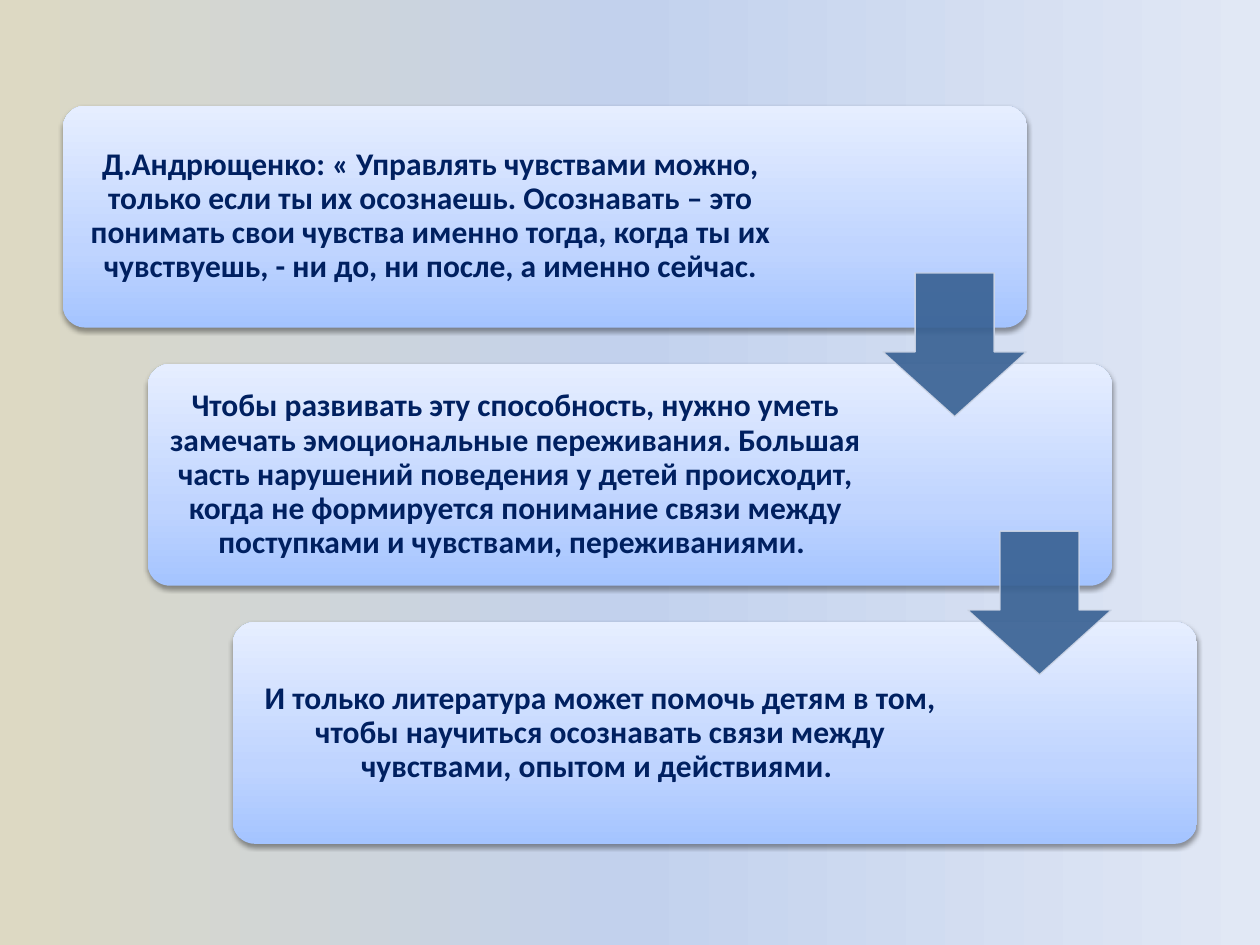
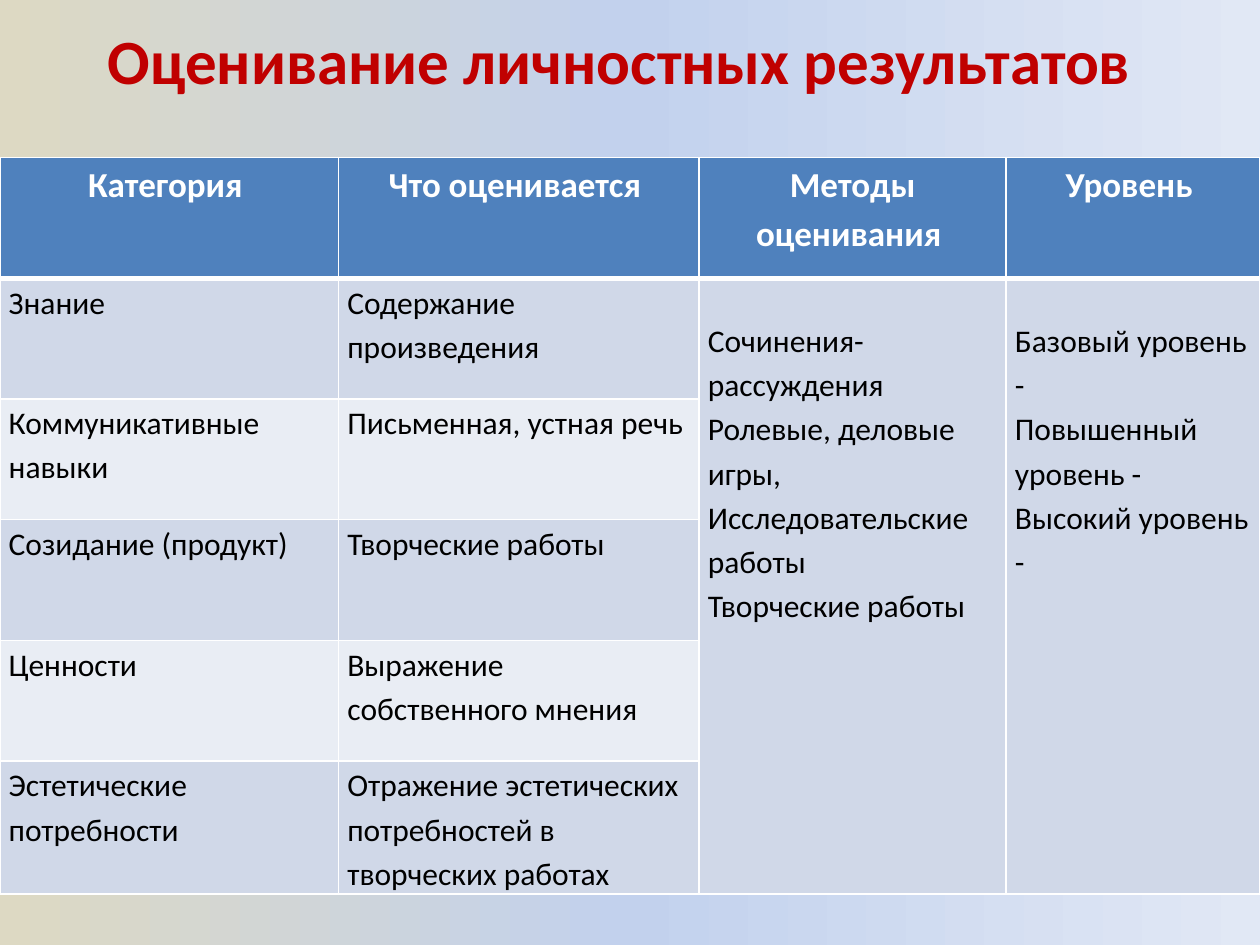
import dataclasses

import lxml.etree
import pptx
import pptx.dml.color
import pptx.enum.shapes
import pptx.enum.text
import pptx.oxml.ns
import pptx.presentation
import pptx.shapes.autoshape
import pptx.slide
import pptx.table
import pptx.text.text
import pptx.util

Pt = pptx.util.Pt
qn = pptx.oxml.ns.qn
MIDDLE = pptx.enum.text.MSO_ANCHOR.MIDDLE
CENTER = pptx.enum.text.PP_ALIGN.CENTER
LEFT = pptx.enum.text.PP_ALIGN.LEFT
SHAPES = pptx.enum.shapes.MSO_SHAPE

FONT = "Calibri"
COLORS = {
    "sand": "DDD9C3",
    "sky": "C2D1ED",
    "mist": "E1E8F5",
    "card_bottom": "A4C4FF",
    "card_middle": "BFD4FF",
    "card_top": "E6EEFF",
    "navy": "002060",
    "arrow": "376092",
    "arrow_line": "D0D8E8",
    "red": "C00000",
    "header": "4F81BD",
    "band_dark": "D0D8E8",
    "band_light": "E9EDF4",
    "white": "FFFFFF",
    "black": "000000",
}
BACKGROUND_STOPS = [(0, "sand"), (50, "sky"), (100, "mist")]
CARD_STOPS = [(0, "card_bottom"), (35, "card_middle"), (100, "card_top")]

CARD_LEFT, CARD_TOP = 36, 60.5
CARD_WIDTH, CARD_HEIGHT = 551, 126.7
CARD_TEXT_WIDTH = 420
STEP_RIGHT, STEP_DOWN = 48.5, 147.5
ARROW_LEFT, ARROW_TOP, ARROW_SIZE = 504.5, 156, 82

STATEMENTS = [
    "Д.Андрющенко: « Управлять чувствами можно, только если ты их осознаешь. "
    "Осознавать – это понимать свои чувства именно тогда, когда ты их чувствуешь, "
    "- ни до, ни после, а именно сейчас.",
    "Чтобы развивать эту способность, нужно уметь замечать эмоциональные переживания. "
    "Большая часть нарушений поведения у детей происходит, когда не формируется "
    "понимание связи между поступками и чувствами, переживаниями. ",
    "И только литература может помочь детям в том, чтобы научиться осознавать связи "
    "между чувствами, опытом и действиями. ",
]

COLUMN_WIDTHS = [193.5, 206, 175.5, 145]
ROW_HEIGHT = 69
HEADERS = ["Категория ", "Что оценивается ", "Методы оценивания ", "Уровень "]
CRITERIA = [
    ("Знание", "Содержание произведения"),
    ("Коммуникативные навыки", "Письменная, устная речь"),
    ("Созидание (продукт)", "Творческие работы"),
    ("Ценности", "Выражение собственного мнения"),
    ("Эстетические потребности", "Отражение эстетических потребностей в творческих работах"),
]
METHODS = "\n".join([
    "Сочинения-рассуждения",
    "Ролевые, деловые игры,",
    "Исследовательские работы",
    "Творческие работы",
])
LEVELS = "\n".join(["Базовый уровень -", "Повышенный уровень -", "Высокий уровень -"])


@dataclasses.dataclass(frozen=True)
class TextStyle:
    size: float
    color: str
    bold: bool = False
    align: pptx.enum.text.PP_ALIGN = CENTER
    line_spacing: float = 1.0


TITLE = TextStyle(36, "red", True)
STATEMENT = TextStyle(18, "navy", True, line_spacing=0.9)
TABLE_HEADER = TextStyle(20, "white", True, line_spacing=1.15)
TABLE_BODY = TextStyle(18, "black", align=LEFT, line_spacing=1.15)


@dataclasses.dataclass(frozen=True)
class Box:
    left: float
    top: float
    width: float
    height: float

    def lengths(self) -> tuple:
        return tuple(Pt(value) for value in dataclasses.astuple(self))


def rgb(name: str) -> pptx.dml.color.RGBColor:
    return pptx.dml.color.RGBColor.from_string(COLORS[name])


def add_element(parent, tag: str, **attributes):
    child = lxml.etree.SubElement(parent, qn(tag))
    for name, value in attributes.items():
        child.set(name, str(value))
    return child


def write(frame: pptx.text.text.TextFrame, text: str, style: TextStyle) -> None:
    frame.text = text
    for paragraph in frame.paragraphs:
        paragraph.alignment = style.align
        paragraph.line_spacing = style.line_spacing
        paragraph.font.name = FONT
        paragraph.font.size = Pt(style.size)
        paragraph.font.bold = style.bold
        paragraph.font.color.rgb = rgb(style.color)


def set_gradient(owner, fill, stops: list, angle: float) -> None:
    fill.gradient()
    fill.gradient_angle = angle
    stop_list = next(owner.element.iter(qn("a:gsLst")))
    for stop in list(stop_list):
        stop_list.remove(stop)
    for position, color in stops:
        stop = add_element(stop_list, "a:gs", pos=position * 1000)
        add_element(stop, "a:srgbClr", val=COLORS[color])


def add_card(slide: pptx.slide.Slide, index: int, text: str) -> None:
    left = CARD_LEFT + index * STEP_RIGHT
    top = CARD_TOP + index * STEP_DOWN
    card = slide.shapes.add_shape(
        SHAPES.ROUNDED_RECTANGLE, *Box(left, top, CARD_WIDTH, CARD_HEIGHT).lengths()
    )
    card.adjustments[0] = 0.1
    card.line.fill.background()
    set_gradient(card, card.fill, CARD_STOPS, 90)
    card.shadow.inherit = False
    effects = next(card.element.iter(qn("a:effectLst")))
    shadow = add_element(
        effects, "a:outerShdw", blurRad=Pt(3.1), dist=Pt(1.6), dir=5400000, rotWithShape=0
    )
    shadow_color = add_element(shadow, "a:srgbClr", val=COLORS["black"])
    add_element(shadow_color, "a:alpha", val=38000)

    text_box = slide.shapes.add_textbox(
        *Box(left, top, CARD_TEXT_WIDTH, CARD_HEIGHT).lengths()
    )
    frame = text_box.text_frame
    frame.word_wrap = True
    frame.vertical_anchor = MIDDLE
    frame.margin_left = frame.margin_right = Pt(5)
    frame.margin_top = frame.margin_bottom = Pt(5)
    write(frame, text, STATEMENT)


def add_arrow(slide: pptx.slide.Slide, index: int) -> None:
    box = Box(
        ARROW_LEFT + index * STEP_RIGHT,
        ARROW_TOP + index * STEP_DOWN,
        ARROW_SIZE,
        ARROW_SIZE,
    )
    arrow = slide.shapes.add_shape(SHAPES.DOWN_ARROW, *box.lengths())
    arrow.adjustments[0] = 0.55
    arrow.adjustments[1] = 0.45
    arrow.shadow.inherit = False
    arrow.fill.solid()
    arrow.fill.fore_color.rgb = rgb("arrow")
    arrow.line.color.rgb = rgb("arrow_line")
    arrow.line.width = Pt(0.75)
    for color in arrow.element.spPr.iter(qn("a:srgbClr")):
        add_element(color, "a:alpha", val=90000)


def set_borders(cell: pptx.table._Cell, top: float, bottom: float) -> None:
    properties = cell._tc.get_or_add_tcPr()
    widths = {"a:lnL": 1, "a:lnR": 1, "a:lnT": top, "a:lnB": bottom}
    for position, (tag, width) in enumerate(widths.items()):
        line = add_element(properties, tag, w=Pt(width))
        fill = add_element(line, "a:solidFill")
        add_element(fill, "a:srgbClr", val=COLORS["white"])
        properties.insert(position, line)


def format_cell(cell: pptx.table._Cell, row: int) -> None:
    color = "header" if row == 0 else "band_dark" if row % 2 else "band_light"
    cell.fill.solid()
    cell.fill.fore_color.rgb = rgb(color)
    cell.margin_left = cell.margin_right = Pt(5)
    cell.margin_top = cell.margin_bottom = Pt(0)
    set_borders(cell, top=3 if row == 1 else 1, bottom=3 if row == 0 else 1)


def add_criteria_table(slide: pptx.slide.Slide) -> None:
    row_count = len(CRITERIA) + 1
    box = Box(0, 90, sum(COLUMN_WIDTHS), row_count * ROW_HEIGHT)
    table = slide.shapes.add_table(row_count, len(HEADERS), *box.lengths()).table
    for column, width in zip(table.columns, COLUMN_WIDTHS):
        column.width = Pt(width)
    for row_index, row in enumerate(table.rows):
        row.height = Pt(ROW_HEIGHT)
        for cell in row.cells:
            format_cell(cell, row_index)
    for column_index, header in enumerate(HEADERS):
        write(table.cell(0, column_index).text_frame, header, TABLE_HEADER)
    for row_index, texts in enumerate(CRITERIA, start=1):
        for column_index, text in enumerate(texts):
            write(table.cell(row_index, column_index).text_frame, text, TABLE_BODY)
    for column_index, text in enumerate([METHODS, LEVELS], start=2):
        cell = table.cell(1, column_index)
        cell.merge(table.cell(row_count - 1, column_index))
        cell.margin_top = Pt(22)
        write(cell.text_frame, text, TABLE_BODY)


def build_statements(presentation: pptx.presentation.Presentation) -> None:
    slide = presentation.slides.add_slide(presentation.slide_layouts[6])
    for index, text in enumerate(STATEMENTS):
        add_card(slide, index, text)
    for index in range(len(STATEMENTS) - 1):
        add_arrow(slide, index)


def build_assessment(presentation: pptx.presentation.Presentation) -> None:
    slide = presentation.slides.add_slide(presentation.slide_layouts[5])
    title = slide.shapes.title
    title.left, title.top, title.width, title.height = Box(34, 0, 648, 68).lengths()
    title.text_frame.vertical_anchor = MIDDLE
    write(title.text_frame, "Оценивание личностных результатов ", TITLE)
    add_criteria_table(slide)


def main() -> None:
    presentation = pptx.Presentation()
    presentation.slide_width = Pt(720)
    presentation.slide_height = Pt(540)
    master = presentation.slide_master
    set_gradient(master, master.background.fill, BACKGROUND_STOPS, 0)
    build_statements(presentation)
    build_assessment(presentation)
    presentation.save("out.pptx")


if __name__ == "__main__":
    main()
